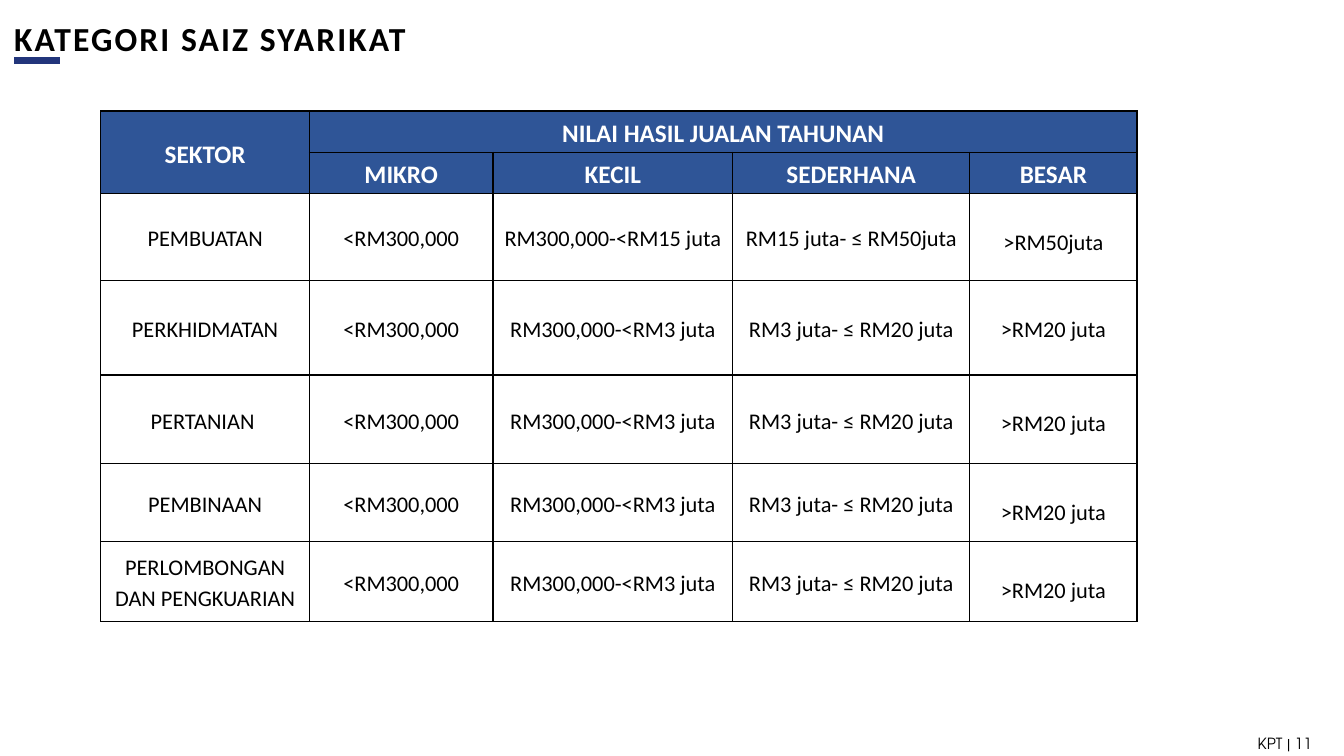
from lxml.etree import SubElement
from pptx import Presentation
from pptx.dml.color import RGBColor
from pptx.enum.shapes import MSO_CONNECTOR as Connector
from pptx.enum.text import MSO_ANCHOR as Anchor, PP_ALIGN as Align
from pptx.oxml.ns import qn
from pptx.util import Inches, Pt

BLACK = RGBColor(0x00, 0x00, 0x00)
WHITE = RGBColor(0xFF, 0xFF, 0xFF)
HEADER_BLUE = RGBColor(0x2F, 0x55, 0x97)
ACCENT_NAVY = RGBColor(0x22, 0x35, 0x7B)

SLIDE_WIDTH, SLIDE_HEIGHT = Inches(13.33), Inches(7.5)
COLUMN_SHARES = [15.53, 13.65, 17.85, 17.63, 12.45]
ROW_SHARES = [5.47, 5.47, 11.47, 12.53, 11.73, 10.33, 10.53]
HEADER_ROWS = 2
SIZE_HEADINGS = ["MIKRO", "KECIL", "SEDERHANA", "BESAR"]
MICRO = "<RM300,000"
COMMON_LIMITS = [MICRO, "RM300,000-<RM3 juta", "RM3 juta- ≤ RM20 juta", ">RM20 juta"]
MANUFACTURING_LIMITS = [MICRO, "RM300,000-<RM15 juta", "RM15 juta- ≤ RM50juta", ">RM50juta"]
OTHER_SECTORS = ["PERKHIDMATAN", "PERTANIAN ", "PEMBINAAN", "PERLOMBONGAN DAN PENGKUARIAN"]


def across(percent):
    """Return a percentage of the slide width."""
    return int(SLIDE_WIDTH * percent / 100)


def down(percent):
    """Return a percentage of the slide height."""
    return int(SLIDE_HEIGHT * percent / 100)


def place(shape, left, top, width, height):
    """Position a shape by percentages of the slide."""
    shape.left, shape.top = across(left), down(top)
    shape.width, shape.height = across(width), down(height)


def style_text(paragraph, size, color, align, bold=False, face="Calibri"):
    """Format a paragraph and its runs."""
    paragraph.alignment = align
    for run in paragraph.runs:
        run.font.name, run.font.size, run.font.bold = face, Pt(size), bold
        run.font.color.rgb = color


def add_title(slide, wording):
    """Fill the title placeholder with widely spaced lettering."""
    title = slide.shapes.title
    place(title, 1.05, 2, 47.04, 6.13)
    frame = title.text_frame
    frame.text = wording
    frame.vertical_anchor = Anchor.MIDDLE
    frame.margin_left = frame.margin_right = 0
    style_text(frame.paragraphs[0], 24, BLACK, Align.LEFT, bold=True)
    frame.paragraphs[0].runs[0].font._element.set("spc", "150")


def add_title_rule(slide):
    """Draw the short accent line under the title."""
    rule = slide.shapes.add_connector(
        Connector.STRAIGHT, across(1.05), down(8), across(4.5), down(8))
    rule.line.color.rgb = ACCENT_NAVY
    rule.line.width = Pt(4.5)
    SubElement(rule._element.spPr, qn("a:effectLst"))


def add_borders(cell):
    """Give a cell thin black lines on all four sides."""
    properties = cell._tc.get_or_add_tcPr()
    for side in ("lnL", "lnR", "lnT", "lnB"):
        border = SubElement(properties, qn(f"a:{side}"), w=str(Pt(1)))
        paint = SubElement(border, qn("a:solidFill"))
        SubElement(paint, qn("a:srgbClr"), val=str(BLACK))


def style_cell(cell, is_header, is_large_limit):
    """Format a cell according to its role in the table."""
    add_borders(cell)
    cell.margin_left = cell.margin_right = Inches(0.07)
    cell.margin_top = Inches(0.31) if is_large_limit else 0
    cell.margin_bottom = 0
    cell.vertical_anchor = Anchor.TOP if is_large_limit else Anchor.MIDDLE
    if is_header:
        cell.fill.solid()
        cell.fill.fore_color.rgb = HEADER_BLUE
    else:
        cell.fill.background()
    paragraph = cell.text_frame.paragraphs[0]
    paragraph.line_spacing = 1.15
    style_text(paragraph, 18 if is_header else 16, WHITE if is_header else BLACK,
               Align.CENTER, bold=is_header)


def add_category_table(slide, rows):
    """Build the table of yearly sales limits by sector and company size."""
    table = slide.shapes.add_table(
        len(ROW_SHARES), len(COLUMN_SHARES), across(7.5), down(14.67),
        across(sum(COLUMN_SHARES)), down(sum(ROW_SHARES))).table
    table.first_row = table.horz_banding = False
    for column, share in zip(table.columns, COLUMN_SHARES):
        column.width = across(share)
    for row, share in zip(table.rows, ROW_SHARES):
        row.height = down(share)
    table.cell(0, 0).merge(table.cell(1, 0))
    table.cell(0, 1).merge(table.cell(0, 4))
    for r, row in enumerate(rows):
        for c, wording in enumerate(row):
            cell = table.cell(r, c)
            cell.text_frame.text = wording
            is_header = r < HEADER_ROWS
            style_cell(cell, is_header, not is_header and c == len(row) - 1)


def add_page_mark(slide, wording):
    """Write the page mark in the lower right corner."""
    mark = slide.shapes.add_textbox(0, 0, 0, 0)
    place(mark, 74.57, 96.27, 23.78, 4)
    frame = mark.text_frame
    frame.word_wrap = True
    frame.vertical_anchor = Anchor.MIDDLE
    frame.text = wording
    style_text(frame.paragraphs[0], 11, BLACK, Align.RIGHT, face="TeX Gyre Adventor")


def main():
    """Create and save the company size slide."""
    deck = Presentation()
    deck.slide_width, deck.slide_height = SLIDE_WIDTH, SLIDE_HEIGHT
    slide = deck.slides.add_slide(deck.slide_layouts.get_by_name("Title Only"))
    rows = [["SEKTOR", "NILAI HASIL JUALAN TAHUNAN", "", "", ""],
            ["", *SIZE_HEADINGS],
            ["PEMBUATAN", *MANUFACTURING_LIMITS]]
    rows += [[sector, *COMMON_LIMITS] for sector in OTHER_SECTORS]
    add_category_table(slide, rows)
    add_title(slide, "KATEGORI SAIZ SYARIKAT")
    add_title_rule(slide)
    add_page_mark(slide, "KPT | 11")
    deck.save("out.pptx")


if __name__ == "__main__":
    main()
